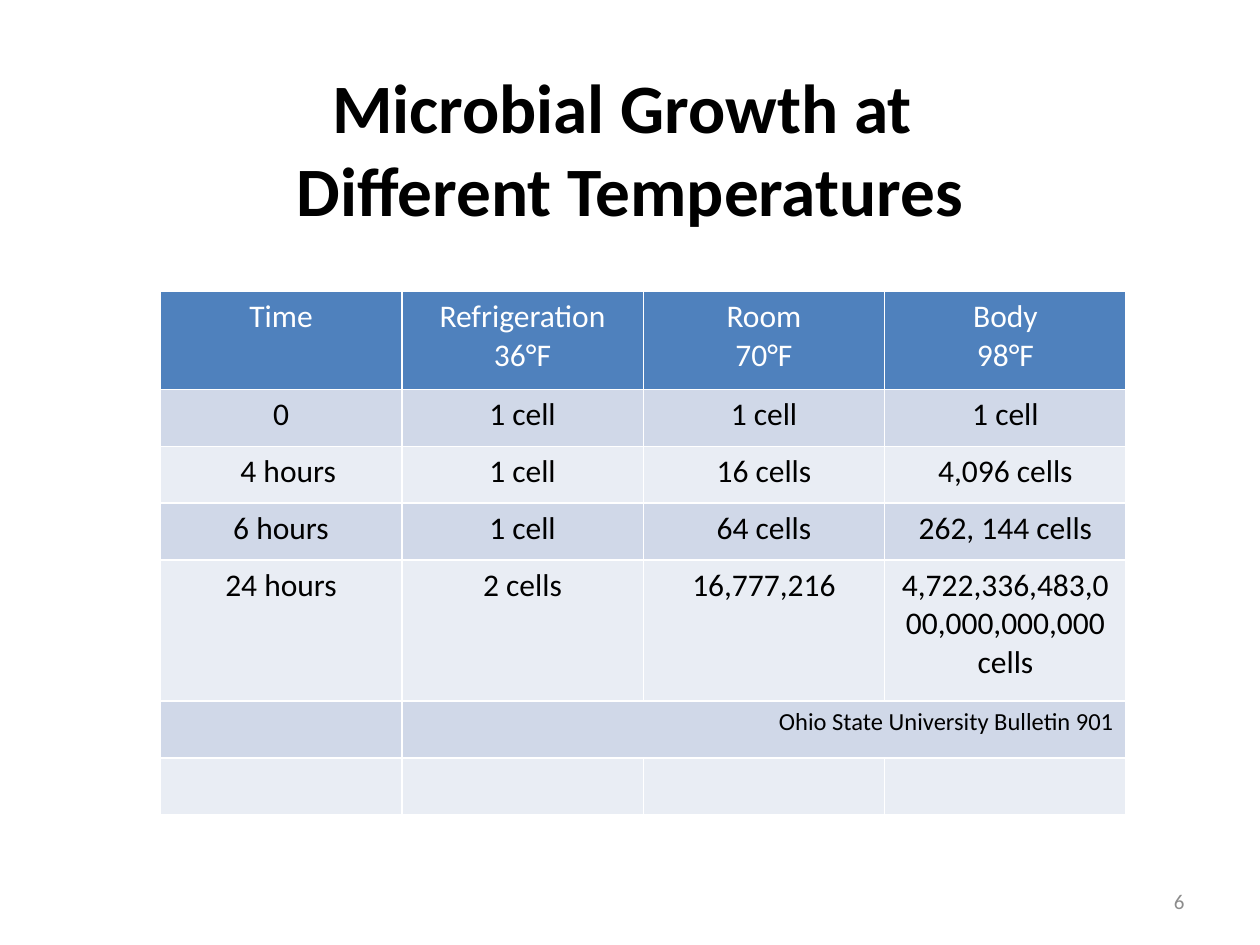
from pptx import Presentation
from pptx.dml.color import RGBColor
from pptx.enum.text import MSO_ANCHOR, PP_ALIGN
from pptx.util import Pt

TITLE = ["Microbial Growth at ", "Different Temperatures"]
ROWS = [
    ["Time", "Refrigeration\n36°F", "Room\n70°F", "Body\n98°F"],
    ["0", "1 cell", "1 cell", "1 cell"],
    ["4 hours", "1 cell", "16 cells", "4,096 cells"],
    ["6 hours", "1 cell", "64 cells", "262, 144 cells"],
    ["24 hours", "2 cells", "16,777,216", "4,722,336,483,000,000,000,000 cells"],
    ["", "Ohio State University Bulletin 901", "", ""],
    ["", "", "", ""],
]
NUMBER = "6"
HIGHS = [56, 32.5, 32.5, 32.5, 80.6, 32.5, 32.5]
WIDE = 138
SOURCE = 5
INK = {
    "head": "4F81BD",
    "odd": "D0D8E8",
    "even": "E9EDF4",
    "white": "FFFFFF",
    "black": "000000",
    "gray": "8C8C8C",
}


def tint(name):
    """Return the named colour."""
    return RGBColor.from_string(INK[name])


def write(para, text, size, color, align, bold=False):
    """Add one formatted run to a paragraph."""
    para.alignment = align
    run = para.add_run()
    run.text = text
    font = run.font
    font.name, font.size, font.bold = "Calibri", Pt(size), bold
    font.color.rgb = tint(color)


def place(shape, left, top, width, height):
    """Set the position and size of a shape."""
    shape.left, shape.top = Pt(left), Pt(top)
    shape.width, shape.height = Pt(width), Pt(height)


def add_title(slide):
    """Fill the title placeholder."""
    title = slide.shapes.title
    place(title, 36, 39, 648, 90)
    frame = title.text_frame
    frame.vertical_anchor = MSO_ANCHOR.MIDDLE
    para = frame.paragraphs[0]
    for i, line in enumerate(TITLE):
        if i:
            para.add_line_break()
        write(para, line, 39.6, "black", PP_ALIGN.CENTER, True)


def add_grid(slide):
    """Build the growth table."""
    cols = len(ROWS[0])
    frame = slide.shapes.add_table(
        len(ROWS), cols, Pt(91.6), Pt(166.6), Pt(WIDE * cols), Pt(sum(HIGHS))
    )
    grid = frame.table
    for col in grid.columns:
        col.width = Pt(WIDE)
    for i, (row, high) in enumerate(zip(ROWS, HIGHS)):
        grid.rows[i].height = Pt(high)
        band = "head" if i == 0 else "odd" if i % 2 else "even"
        ink = "white" if i == 0 else "black"
        size, align = (14, PP_ALIGN.RIGHT) if i == SOURCE else (18, PP_ALIGN.CENTER)
        for j, text in enumerate(row):
            cell = grid.cell(i, j)
            cell.fill.solid()
            cell.fill.fore_color.rgb = tint(band)
            for k, line in enumerate(text.split("\n") if text else []):
                body = cell.text_frame
                para = body.add_paragraph() if k else body.paragraphs[0]
                write(para, line, size, ink, align)
    grid.cell(SOURCE, 1).merge(grid.cell(SOURCE, cols - 1))
    grid.cell(2, 0).margin_left = Pt(15.4)


def add_number(slide):
    """Add the slide number."""
    box = slide.shapes.add_textbox(Pt(516), Pt(500.5), Pt(168), Pt(28.8))
    frame = box.text_frame
    frame.word_wrap = True
    frame.vertical_anchor = MSO_ANCHOR.MIDDLE
    write(frame.paragraphs[0], NUMBER, 12, "gray", PP_ALIGN.RIGHT)


def main():
    """Build and save the slide."""
    deck = Presentation()
    deck.slide_width, deck.slide_height = Pt(720), Pt(540)
    slide = deck.slides.add_slide(deck.slide_layouts[5])
    add_title(slide)
    add_number(slide)
    add_grid(slide)
    deck.save("out.pptx")


if __name__ == "__main__":
    main()
